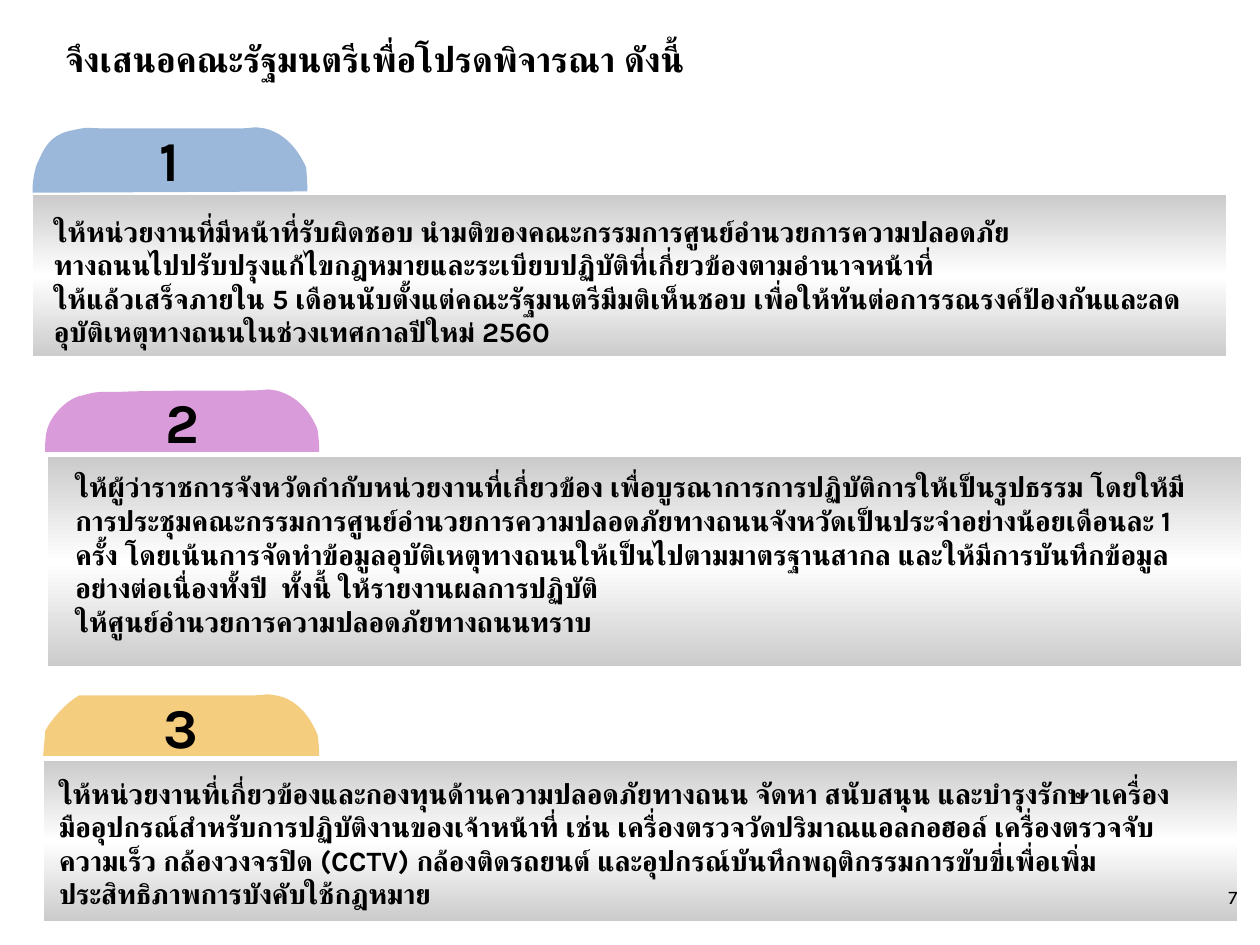
from copy import deepcopy

from pptx import Presentation
from pptx.dml.color import RGBColor
from pptx.enum.shapes import MSO_SHAPE
from pptx.enum.text import MSO_ANCHOR, MSO_AUTO_SIZE, PP_ALIGN
from pptx.oxml.ns import qn
from pptx.oxml.xmlchemy import OxmlElement
from pptx.util import Inches, Pt

ROUND_RECT = MSO_SHAPE.ROUNDED_RECTANGLE
TOP, MIDDLE = MSO_ANCHOR.TOP, MSO_ANCHOR.MIDDLE
LEFT, CENTER, RIGHT = PP_ALIGN.LEFT, PP_ALIGN.CENTER, PP_ALIGN.RIGHT
FIXED, GROW = MSO_AUTO_SIZE.NONE, MSO_AUTO_SIZE.SHAPE_TO_FIT_TEXT

THEME = {
    "font": "Karla", "text": "000000", "white": "FFFFFF", "edge_shade": 79216,
    "tab_alpha": 50000, "title": 20, "number": 32, "body": 16, "page": 11,
}

# Content: text, then (left, top, width, height) in inches
TITLE = ("จึงเสนอคณะรัฐมนตรีเพื่อโปรดพิจารณา ดังนี้", (0.42, 0.25, 5.82, 0.44))
PAGE = ("7", (9.42, 6.92, 0.5, 0.4))

# A tab outline is a start point and segments: 1 point is a line, 3 points a curve
SECTIONS = [
    {
        "number": "1", "color": "3973B9",
        "bar": (0.24, 1.53, 9.51, 1.32), "box": (0.33, 1.65, 9.25, 1.18),
        "start": (0.26, 1.53),
        "outline": [
            [(0.26, 1.53), (0.25, 1.44), (0.29, 1.31)],
            [(0.33, 1.23), (0.37, 1.08), (0.55, 1.04)],
            [(0.73, 1), (0.66, 1.02), (0.87, 1.02)],
            [(1.09, 1.02), (1.65, 1.02), (1.86, 1.02)],
            [(2.06, 1.02), (1.97, 1), (2.1, 1.02)],
            [(2.23, 1.05), (2.35, 1.15), (2.43, 1.33)],
            [(2.44, 1.45), (2.44, 1.52), (2.44, 1.52)],
            [(0.26, 1.53)],
        ],
        "text": "ให้หน่วยงานที่มีหน้าที่รับผิดชอบ นำมติของคณะกรรมการศูนย์อำนวยการความปลอดภัย\v"
                "ทางถนนไปปรับปรุงแก้ไขกฎหมายและระเบียบปฏิบัติที่เกี่ยวข้องตามอำนาจหน้าที่ \v"
                "ให้แล้วเสร็จภายใน 5 เดือนนับตั้งแต่คณะรัฐมนตรีมีมติเห็นชอบ "
                "เพื่อให้ทันต่อการรณรงค์ป้องกันและลดอุบัติเหตุทางถนนในช่วงเทศกาลปีใหม่ 2560",
    },
    {
        "number": "2", "color": "B639B9",
        "bar": (0.36, 3.61, 9.51, 1.7), "box": (0.5, 3.68, 9.25, 1.45),
        "start": (0.36, 3.6),
        "outline": [
            [(0.36, 3.6), (0.35, 3.47), (0.38, 3.39)],
            [(0.41, 3.3), (0.53, 3.16), (0.65, 3.14)],
            [(0.76, 3.11), (0.75, 3.11), (0.96, 3.11)],
            [(1.18, 3.1), (1.75, 3.1), (1.95, 3.1)],
            [(2.16, 3.1), (2.07, 3.08), (2.19, 3.1)],
            [(2.32, 3.13), (2.45, 3.23), (2.52, 3.41)],
            [(2.54, 3.54), (2.53, 3.61), (2.53, 3.61)],
            [(0.36, 3.6)],
        ],
        "text": "ให้ผู้ว่าราชการจังหวัดกำกับหน่วยงานที่เกี่ยวข้อง เพื่อบูรณาการการปฏิบัติการให้เป็นรูปธรรม "
                "โดยให้มีการประชุมคณะกรรมการศูนย์อำนวยการความปลอดภัยทางถนนจังหวัดเป็นประจำอย่างน้อยเดือนละ 1 ครั้ง "
                "โดยเน้นการจัดทำข้อมูลอุบัติเหตุทางถนนให้เป็นไปตามมาตรฐานสากล "
                "และให้มีการบันทึกข้อมูลอย่างต่อเนื่องทั้งปี  ทั้งนี้ ให้รายงานผลการปฏิบัติ\v"
                "ให้ศูนย์อำนวยการความปลอดภัยทางถนนทราบ",
    },
    {
        "number": "3", "color": "EA9C00",
        "bar": (0.33, 6.02, 9.51, 1.31), "box": (0.37, 6.11, 9.25, 1.18),
        "start": (0.34, 6.03),
        "outline": [
            [(0.36, 5.8)],
            [(0.4, 5.72), (0.53, 5.57), (0.63, 5.52)],
            [(0.96, 5.52)],
            [(1.18, 5.52), (1.75, 5.52), (1.95, 5.52)],
            [(2.16, 5.52), (2.07, 5.5), (2.19, 5.52)],
            [(2.32, 5.54), (2.44, 5.64), (2.52, 5.83)],
            [(2.54, 5.96), (2.53, 6.03), (2.53, 6.03)],
            [(0.34, 6.03)],
        ],
        "text": "ให้หน่วยงานที่เกี่ยวข้องและกองทุนด้านความปลอดภัยทางถนน จัดหา สนับสนุน "
                "และบำรุงรักษาเครื่องมืออุปกรณ์สำหรับการปฏิบัติงานของเจ้าหน้าที่ เช่น "
                "เครื่องตรวจวัดปริมาณแอลกอฮอล์ เครื่องตรวจจับความเร็ว กล้องวงจรปิด (CCTV) กล้องติดรถยนต์ "
                "และอุปกรณ์บันทึกพฤติกรรมการขับขี่เพื่อเพิ่มประสิทธิภาพการบังคับใช้กฎหมาย",
    },
]


def rgb(value):
    return RGBColor.from_string(value)


def add_element(parent, tag, **attributes):
    element = OxmlElement(tag)
    for name, value in attributes.items():
        element.set(name, str(value))
    parent.append(element)


def write(shape, text, size, bold=True, align=LEFT, anchor=TOP, wrap=True, fit=FIXED):
    tf = shape.text_frame
    tf.word_wrap, tf.vertical_anchor, tf.auto_size = wrap, anchor, fit
    p = tf.paragraphs[0]
    p.text, p.alignment = text, align
    for r in p.runs:
        r.font.name, r.font.size, r.font.bold = THEME["font"], Pt(size), bold
        r.font.color.rgb = rgb(THEME["text"])
        # Thai letters take the complex-script font
        add_element(r.font._element, "a:cs", typeface=THEME["font"])
    # Line breaks keep the size of the text around them
    for br in p._p.findall(qn("a:br")):
        br.append(deepcopy(p.runs[0].font._element))


def add_text(s, text, at, size, **style):
    write(s.shapes.add_textbox(*map(Inches, at)), text, size, **style)


def bend(sp, segments):
    """Join each three straight steps of a curved segment into one curve."""
    steps = iter(list(sp._element.iter(qn("a:lnTo"))))
    for segment in segments:
        group = [next(steps) for _ in segment]
        if len(group) == 3:
            curve = OxmlElement("a:cubicBezTo")
            group[0].addprevious(curve)
            for step in group:
                curve.append(step[0])
                step.getparent().remove(step)


def add_tab(s, section):
    segments = section["outline"]
    points = [(Inches(x), Inches(y)) for segment in segments for x, y in segment]
    builder = s.shapes.build_freeform(*map(Inches, section["start"]))
    builder.add_line_segments(points, close=True)
    sp = builder.convert_to_shape()
    bend(sp, segments)
    sp.shadow.inherit = False
    sp.line.fill.background()
    sp.fill.solid()
    sp.fill.fore_color.rgb = rgb(section["color"])
    color = sp._element.spPr.find(qn("a:solidFill"))[0]
    add_element(color, "a:alpha", val=THEME["tab_alpha"])
    write(sp, section["number"], THEME["number"], align=CENTER, anchor=MIDDLE, wrap=False)


def add_bar(s, section):
    sp = s.shapes.add_shape(ROUND_RECT, *map(Inches, section["bar"]))
    sp.adjustments[0] = 0
    sp.shadow.inherit = False
    sp.line.color.rgb, sp.line.width = rgb(THEME["white"]), Pt(3)
    sp.fill.gradient()
    sp.fill.gradient_angle = 270
    # White in the middle, shaded at both edges
    stops = sp._element.spPr.find(qn("a:gradFill")).find(qn("a:gsLst"))
    stops[0].addnext(deepcopy(stops[0]))
    for stop, position in zip(sp.fill.gradient_stops, (0, 0.5, 1)):
        stop.position, stop.color.rgb = position, rgb(THEME["white"])
    for edge in (stops[0], stops[2]):
        add_element(edge[0], "a:gamma")
        add_element(edge[0], "a:shade", val=THEME["edge_shade"])
        add_element(edge[0], "a:invGamma")


def main():
    prs = Presentation()
    prs.slide_width, prs.slide_height = Inches(10), Inches(7.5)
    s = prs.slides.add_slide(prs.slide_layouts[6])

    # Bars and tabs: the first bar lies behind the tabs, the others in front
    first, *others = SECTIONS
    add_bar(s, first)
    for section in SECTIONS:
        add_tab(s, section)
    for section in others:
        add_bar(s, section)

    # Heading and proposals
    add_text(s, *TITLE, THEME["title"], fit=GROW)
    for section in SECTIONS:
        add_text(s, section["text"], section["box"], THEME["body"], fit=GROW)

    # Page number
    add_text(s, *PAGE, THEME["page"], bold=False, align=RIGHT, anchor=MIDDLE)
    prs.save("out.pptx")


if __name__ == "__main__":
    main()
